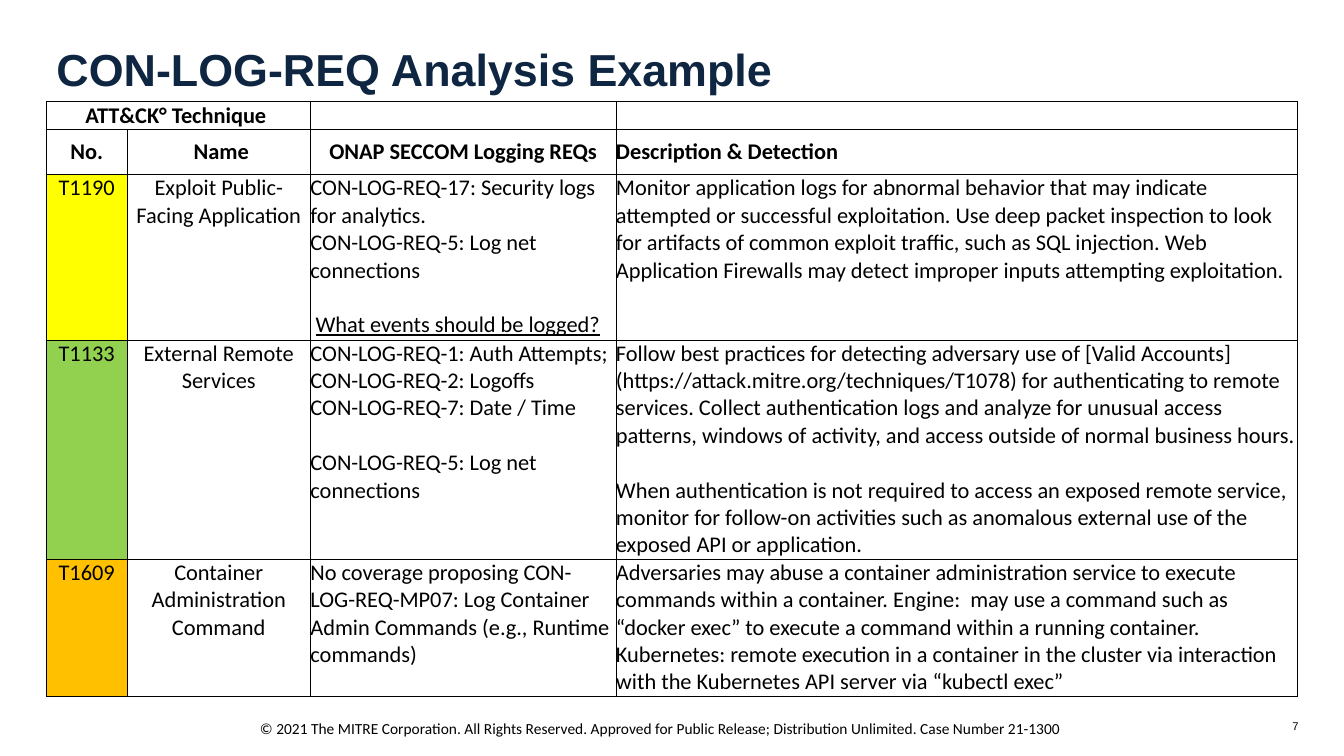
from dataclasses import dataclass

from lxml.etree import SubElement
from pptx import Presentation
from pptx.dml.color import RGBColor
from pptx.enum.text import MSO_ANCHOR, MSO_AUTO_SIZE, PP_ALIGN
from pptx.oxml.ns import qn
from pptx.util import Inches, Pt


@dataclass(frozen=True)
class Theme:
    heading_font: str = "Arial"
    body_font: str = "Calibri"
    ink: str = "000000"
    navy: str = "0E2641"
    yellow: str = "FFFF00"
    green: str = "92D050"
    orange: str = "FFC000"
    title_size: float = 32
    table_size: float = 16
    footer_size: float = 11
    number_size: float = 8
    line_gap: float = 19.5
    border_width: float = 0.5


THEME = Theme()
COLUMN_WIDTHS = (0.8, 1.82, 3.03, 6.76)
ROW_HEIGHTS = (0.27, 0.45, 1.64, 2.17, 1.36)
HEADINGS = ("No.", " Name", "ONAP SECCOM Logging REQs", "Description & Detection")
HEADING_ALIGNS = (PP_ALIGN.CENTER, PP_ALIGN.CENTER, PP_ALIGN.CENTER, PP_ALIGN.LEFT)

GAP = {"before": THEME.line_gap}
TECHNIQUES = (
    (
        "T1190", THEME.yellow, "Exploit Public-Facing Application",
        (
            ("CON-LOG-REQ-17: Security logs for analytics.", {}),
            ("CON-LOG-REQ-5: Log net connections", {}),
            ("What events should be logged?", {**GAP, "underline": True, "indent": 0.05}),
        ),
        (
            ("Monitor application logs for abnormal behavior that may indicate attempted or "
             "successful exploitation. Use deep packet inspection to look for artifacts of common "
             "exploit traffic, such as SQL injection. Web Application Firewalls may detect "
             "improper inputs attempting exploitation.", {}),
        ),
    ),
    (
        "T1133", THEME.green, "External Remote Services",
        (
            ("CON-LOG-REQ-1: Auth Attempts;", {}),
            ("CON-LOG-REQ-2: Logoffs", {}),
            ("CON-LOG-REQ-7: Date / Time", {}),
            ("CON-LOG-REQ-5: Log net connections", GAP),
        ),
        (
            ("Follow best practices for detecting adversary use of [Valid Accounts]"
             "(https://attack.mitre.org/techniques/T1078) for authenticating to remote services. "
             "Collect authentication logs and analyze for unusual access patterns, windows of "
             "activity, and access outside of normal business hours.", {}),
            ("When authentication is not required to access an exposed remote service, monitor "
             "for follow-on activities such as anomalous external use of the exposed API or "
             "application.", GAP),
        ),
    ),
    (
        "T1609", THEME.orange, "Container Administration Command",
        (
            ("No coverage proposing CON-LOG-REQ-MP07: Log Container Admin Commands "
             "(e.g., Runtime commands)", {}),
        ),
        (
            ("Adversaries may abuse a container administration service to execute commands "
             "within a container. Engine:  may use a command such as “docker exec” to execute a "
             "command within a running container.", {}),
            ("Kubernetes: remote execution in a container in the cluster via interaction with "
             "the Kubernetes API server via “kubectl exec”", {}),
        ),
    ),
)


def write(paragraph, text, *, size=THEME.table_size, font=THEME.body_font, color=THEME.ink,
          bold=False, underline=False, align=PP_ALIGN.LEFT, before=0, spacing=1.0, indent=0):
    paragraph.alignment = align
    paragraph.line_spacing = spacing
    if before:
        paragraph.space_before = Pt(before)
    if indent:
        paragraph._p.get_or_add_pPr().set("marL", str(Inches(indent)))
    run = paragraph.add_run()
    run.text = text
    run.font.size = Pt(size)
    run.font.name = font
    run.font.bold = bold
    run.font.underline = underline
    run.font.color.rgb = RGBColor.from_string(color)


def place(part, left, top, width, height):
    part.left, part.top = Inches(left), Inches(top)
    part.width, part.height = Inches(width), Inches(height)


def add_title(slide, text):
    title = slide.shapes.title
    place(title, 0.46, 0.42, 12.41, 0.59)
    frame = title.text_frame
    frame.auto_size = MSO_AUTO_SIZE.NONE
    frame.vertical_anchor = MSO_ANCHOR.MIDDLE
    write(frame.paragraphs[0], text, size=THEME.title_size, font=THEME.heading_font,
          color=THEME.navy, bold=True, spacing=0.9)


def add_label(slide, box, text, *, inset=None, anchor=MSO_ANCHOR.TOP, **text_format):
    frame = slide.shapes.add_textbox(*(Inches(length) for length in box)).text_frame
    frame.word_wrap = True
    frame.vertical_anchor = anchor
    if inset is not None:
        frame.margin_left = frame.margin_right = Inches(inset)
        frame.margin_top = frame.margin_bottom = Inches(inset)
    write(frame.paragraphs[0], text, **text_format)


def format_cell(cell):
    cell.margin_left = cell.margin_right = cell.margin_top = cell.margin_bottom = Inches(0)
    properties = cell._tc.get_or_add_tcPr()
    for edge in ("a:lnL", "a:lnR", "a:lnT", "a:lnB"):
        border = SubElement(properties, qn(edge), w=str(Pt(THEME.border_width)))
        solid = SubElement(border, qn("a:solidFill"))
        SubElement(solid, qn("a:srgbClr"), val=THEME.ink)
    cell.fill.background()


def fill_cell(cell, paragraphs, anchor=MSO_ANCHOR.TOP, **text_format):
    cell.vertical_anchor = anchor
    frame = cell.text_frame
    for index, (text, extra) in enumerate(paragraphs):
        paragraph = frame.add_paragraph() if index else frame.paragraphs[0]
        write(paragraph, text, **text_format, **extra)


def add_technique_table(slide):
    table = slide.shapes.add_table(
        len(ROW_HEIGHTS), len(COLUMN_WIDTHS), Inches(0.46), Inches(1.01),
        Inches(sum(COLUMN_WIDTHS)), Inches(sum(ROW_HEIGHTS))).table
    table.first_row = table.horz_banding = False
    for column, width in zip(table.columns, COLUMN_WIDTHS):
        column.width = Inches(width)
    for row, height in zip(table.rows, ROW_HEIGHTS):
        row.height = Inches(height)
    for cell in table.iter_cells():
        format_cell(cell)

    group = table.cell(0, 0)
    group.merge(table.cell(0, 1))
    fill_cell(group, [("ATT&CK° Technique ", {})], MSO_ANCHOR.BOTTOM,
              bold=True, align=PP_ALIGN.CENTER)
    for column in range(1, len(COLUMN_WIDTHS)):
        blank = table.cell(0, column).text_frame.paragraphs[0]
        SubElement(blank._p, qn("a:endParaRPr"), sz=str(int(THEME.table_size * 100)))

    for column, (heading, align) in enumerate(zip(HEADINGS, HEADING_ALIGNS)):
        fill_cell(table.cell(1, column), [(heading, {})], MSO_ANCHOR.MIDDLE,
                  bold=True, align=align)

    for row, (number, color, name, requirements, detection) in enumerate(TECHNIQUES, 2):
        number_cell = table.cell(row, 0)
        number_cell.fill.solid()
        number_cell.fill.fore_color.rgb = RGBColor.from_string(color)
        fill_cell(number_cell, [(number, {})], align=PP_ALIGN.CENTER)
        fill_cell(table.cell(row, 1), [(name, {})], align=PP_ALIGN.CENTER)
        fill_cell(table.cell(row, 2), requirements)
        fill_cell(table.cell(row, 3), detection)


def main():
    presentation = Presentation()
    presentation.slide_width = Inches(13.33)
    presentation.slide_height = Inches(7.5)
    slide = presentation.slides.add_slide(presentation.slide_layouts.get_by_name("Title Only"))
    add_title(slide, "CON-LOG-REQ Analysis Example")
    add_technique_table(slide)
    add_label(slide, (2.48, 7.08, 8.32, 0.29),
              "© 2021 The MITRE Corporation. All Rights Reserved. Approved for Public Release; "
              "Distribution Unlimited. Case Number 21-1300", size=THEME.footer_size)
    add_label(slide, (12.2, 7.14, 0.68, 0.13), "7", inset=0, anchor=MSO_ANCHOR.MIDDLE,
              size=THEME.number_size, font=THEME.heading_font, align=PP_ALIGN.RIGHT)
    presentation.save("out.pptx")


if __name__ == "__main__":
    main()
